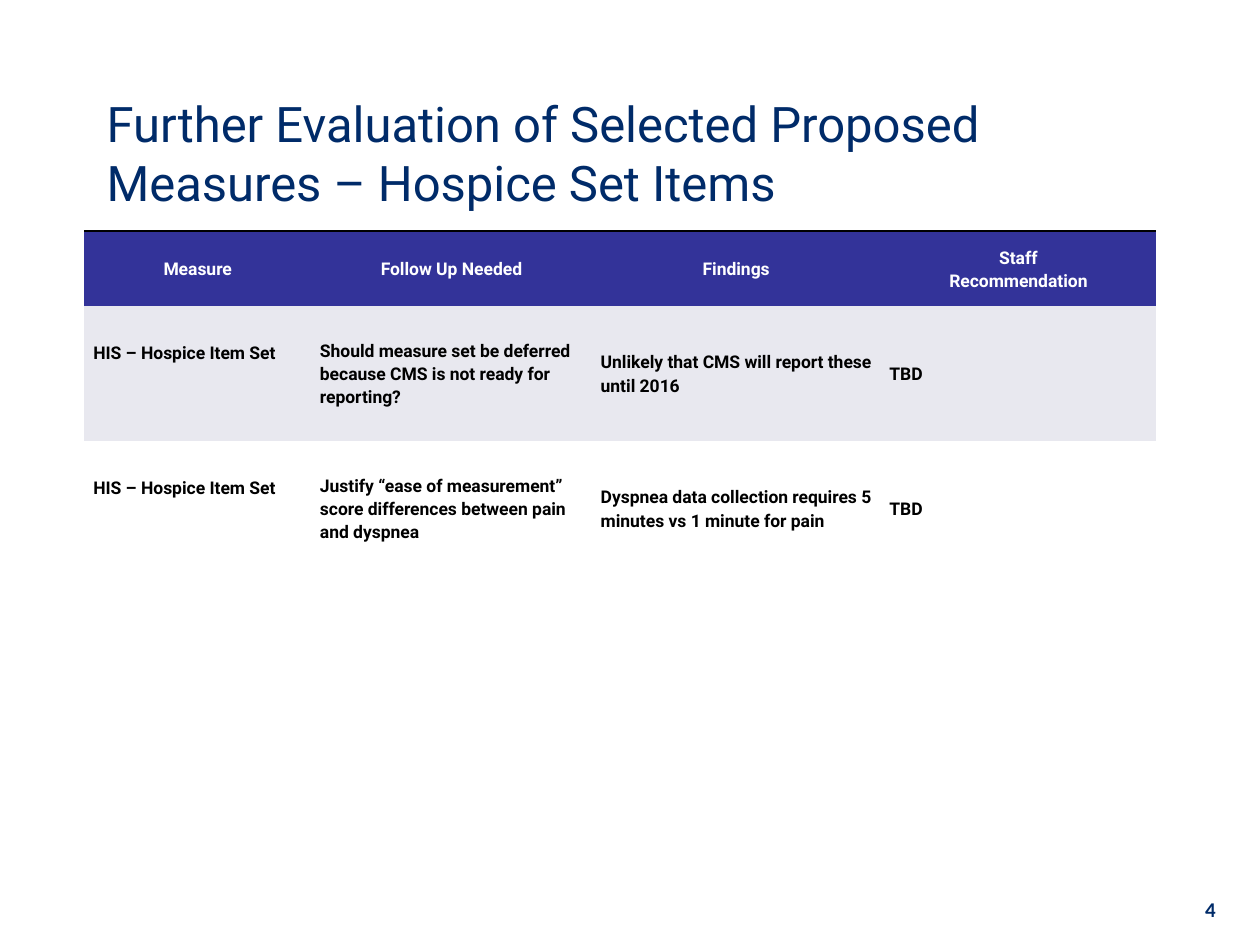
from lxml import etree
from pptx import Presentation
from pptx.dml.color import RGBColor
from pptx.enum import text
from pptx.oxml import ns
from pptx.util import Cm, Pt

COLORS = {"navy": "002B69", "header": "333399", "band": "E8E8EF",
          "white": "FFFFFF", "black": "000000"}
PLAIN_STYLE = "{2D5ABB26-0587-4C30-8999-92F81FD0307C}"
COL_WIDTHS = [4.57, 5.66, 5.82, 5.56]
ROW_HEIGHTS = [1.5, 2.72, 2.72]
HEADERS = ["Measure", "Follow Up Needed", "Findings", "Staff\nRecommendation"]
ROWS = [
    ["HIS – Hospice Item Set",
     "Should measure set be deferred because CMS is not ready for reporting?",
     "Unlikely that CMS will report these until 2016", "TBD"],
    ["HIS – Hospice Item Set",
     "Justify “ease of measurement” score differences between pain and dyspnea",
     "Dyspnea data collection requires 5 minutes vs 1 minute for pain", "TBD"],
]


def rgb(name):
    return RGBColor.from_string(COLORS[name])


def write(tf, content, *, size, color, font="Roboto", bold=False,
          align=text.PP_ALIGN.LEFT, spacing=1.0):
    """Fill a text frame, one paragraph for each line of content."""
    tf.word_wrap = True
    for i, line in enumerate(content.split("\n")):
        p = tf.add_paragraph() if i else tf.paragraphs[0]
        p.alignment = align
        p.line_spacing = spacing
        r = p.add_run()
        r.text = line
        r.font.name = font
        r.font.size = Pt(size)
        r.font.bold = bold
        r.font.color.rgb = rgb(color)


def add_text(s, content, left, top, width, height, **fmt):
    tf = s.shapes.add_textbox(Cm(left), Cm(top), Cm(width), Cm(height)).text_frame
    tf.vertical_anchor = text.MSO_ANCHOR.MIDDLE
    write(tf, content, **fmt)


def fill_cell(cell, content, fill, *, inset, bottom=0, **fmt):
    cell.fill.solid()
    cell.fill.fore_color.rgb = rgb(fill)
    cell.vertical_anchor = text.MSO_ANCHOR.MIDDLE
    cell.margin_left = cell.margin_right = Cm(inset)
    cell.margin_top = 0
    cell.margin_bottom = Cm(bottom)
    write(cell.text_frame, content, size=10, bold=True, spacing=1.15, **fmt)


def add_top_border(cell, color):
    ln = etree.Element(ns.qn("a:lnT"), w=str(Pt(1)))
    solid = etree.SubElement(ln, ns.qn("a:solidFill"))
    etree.SubElement(solid, ns.qn("a:srgbClr"), val=COLORS[color])
    cell._tc.get_or_add_tcPr().insert(0, ln)


def add_measure_table(s, left, top):
    frame = s.shapes.add_table(len(ROW_HEIGHTS), len(COL_WIDTHS), Cm(left), Cm(top),
                               Cm(sum(COL_WIDTHS)), Cm(sum(ROW_HEIGHTS)))
    table = frame.table
    table.horz_banding = False
    next(frame._element.iter(ns.qn("a:tableStyleId"))).text = PLAIN_STYLE
    for col, width in zip(table.columns, COL_WIDTHS):
        col.width = Cm(width)
    for row, height in zip(table.rows, ROW_HEIGHTS):
        row.height = Cm(height)

    for c, header in enumerate(HEADERS):
        cell = table.cell(0, c)
        fill_cell(cell, header, "header", inset=0.15, color="white",
                  align=text.PP_ALIGN.CENTER)
        add_top_border(cell, "black")
    for r, (values, fill) in enumerate(zip(ROWS, ["band", "white"]), start=1):
        for c, value in enumerate(values):
            # The measure names sit a little above the middle of their row.
            fill_cell(table.cell(r, c), value, fill, inset=0.18,
                      bottom=0 if c else 0.83, color="black")


def main():
    prs = Presentation()
    prs.slide_width, prs.slide_height = Cm(25.4), Cm(19.05)
    s = prs.slides.add_slide(prs.slide_layouts[6])
    add_text(s, "Further Evaluation of Selected Proposed Measures – Hospice Set Items",
             1.9, 1.7, 21.6, 2.75, size=28, color="navy")
    add_measure_table(s, 1.7, 4.66)
    add_text(s, "4", 19.48, 17.98, 5.28, 0.69, size=12, color="navy",
             font="Calibri", bold=True, align=text.PP_ALIGN.RIGHT)
    prs.save("out.pptx")


if __name__ == "__main__":
    main()
